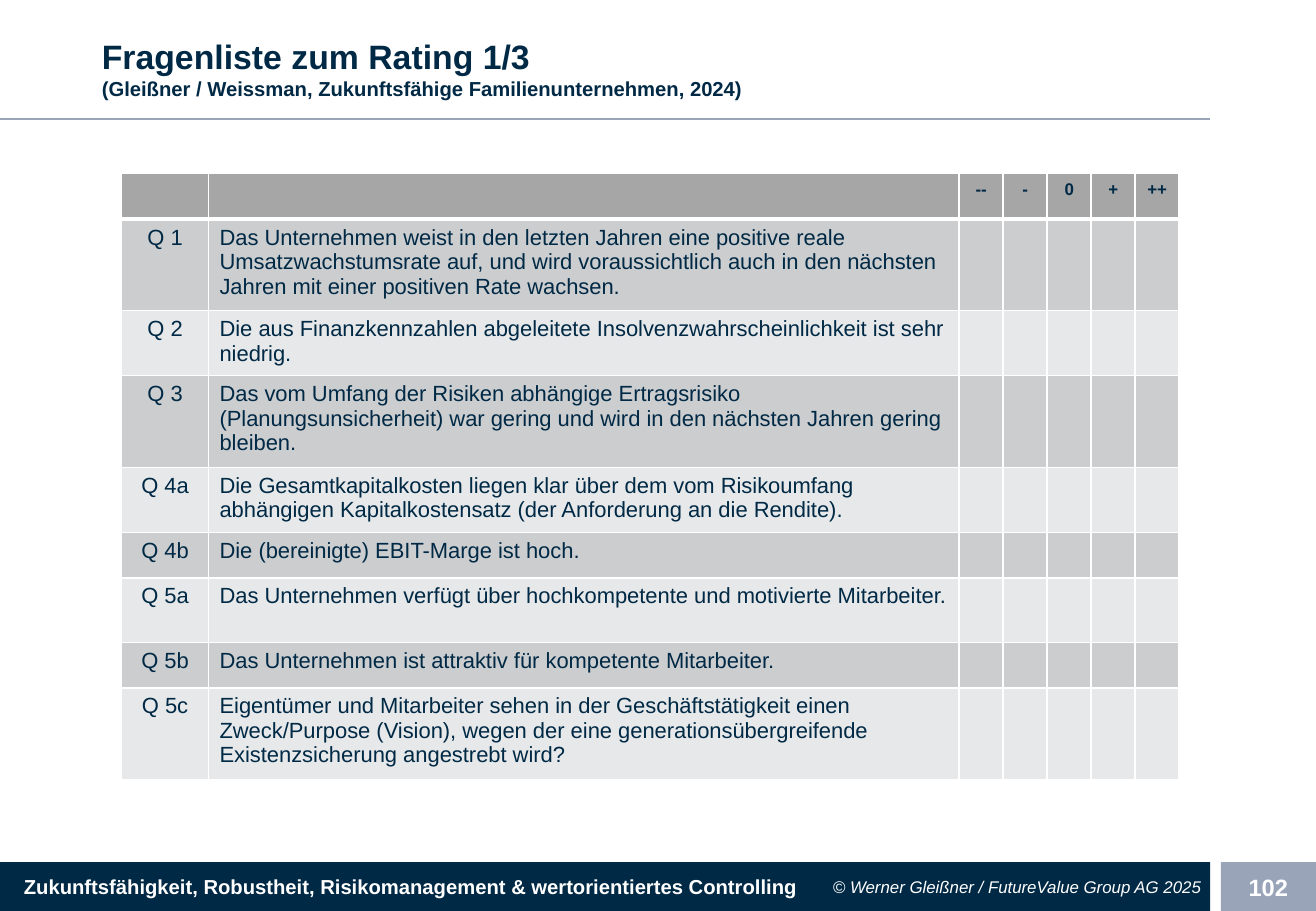
from lxml.etree import SubElement
from pptx import Presentation
from pptx.dml.color import RGBColor
from pptx.enum.shapes import MSO_CONNECTOR, MSO_SHAPE
from pptx.enum.text import MSO_ANCHOR, PP_ALIGN
from pptx.oxml.ns import qn
from pptx.util import Cm, Pt

COLORS = {
    "navy": "002945",
    "steel": "99A4B9",
    "white": "FFFFFF",
    "header": "A6A6A6",
    "dark_band": "CCCDCF",
    "light_band": "E7E8E9",
}
RATINGS = ["--", "-", "0", "+", "++"]
TALL, MEDIUM, LOW = 1.88, 1.35, 0.95
QUESTIONS = [
    ("Q 1", TALL, "Das Unternehmen weist in den letzten Jahren eine positive reale "
     "Umsatzwachstumsrate auf, und wird voraussichtlich auch in den nächsten Jahren "
     "mit einer positiven Rate wachsen."),
    ("Q 2", MEDIUM, "Die aus Finanzkennzahlen abgeleitete Insolvenzwahrscheinlichkeit "
     "ist sehr niedrig."),
    ("Q 3", TALL, "Das vom Umfang der Risiken abhängige Ertragsrisiko "
     "(Planungsunsicherheit) war gering und wird in den nächsten Jahren gering bleiben."),
    ("Q 4a", MEDIUM, "Die Gesamtkapitalkosten liegen klar über dem vom Risikoumfang "
     "abhängigen Kapitalkostensatz (der Anforderung an die Rendite)."),
    ("Q 4b", LOW, "Die (bereinigte) EBIT-Marge ist hoch."),
    ("Q 5a", MEDIUM, "Das Unternehmen verfügt über hochkompetente und motivierte "
     "Mitarbeiter."),
    ("Q 5b", LOW, "Das Unternehmen ist attraktiv für kompetente Mitarbeiter."),
    ("Q 5c", TALL, "Eigentümer und Mitarbeiter sehen in der Geschäftstätigkeit einen "
     "Zweck/Purpose (Vision), wegen der eine generationsübergreifende "
     "Existenzsicherung angestrebt wird?"),
]


def add_text(p, text, size, color, bold=False, italic=False):
    r = p.add_run()
    r.text = text
    r.font.name = "Arial"
    r.font.size = Pt(size)
    r.font.bold = bold
    r.font.italic = italic
    r.font.color.rgb = RGBColor.from_string(COLORS[color])


def set_up_frame(sp, align, left=0.2, wrap=True):
    """Set margins, anchor and alignment, and return the first paragraph."""
    tf = sp.text_frame
    tf.word_wrap = wrap
    tf.vertical_anchor = MSO_ANCHOR.MIDDLE
    tf.margin_left, tf.margin_right = Cm(left), Cm(0.2)
    tf.margin_top = tf.margin_bottom = Cm(0.1)
    p = tf.paragraphs[0]
    p.alignment = align
    return p


prs = Presentation()
prs.slide_width, prs.slide_height = Cm(27.51), Cm(19.05)
s = prs.slides.add_slide(prs.slide_layouts[6])

# Footer
footer_top, footer_height, content_width = Cm(18.03), Cm(1.02), Cm(25.3)
bars = [
    (Cm(0), content_width, "navy", PP_ALIGN.LEFT, 0.5, False, 12,
     "Zukunftsfähigkeit, Robustheit, Risikomanagement & wertorientiertes Controlling"),
    (Cm(25.52), Cm(1.99), "steel", PP_ALIGN.CENTER, 0.2, True, 14, "102"),
]
for left, width, color, align, inset, wrap, size, text in bars:
    bar = s.shapes.add_shape(MSO_SHAPE.RECTANGLE, left, footer_top, width, footer_height)
    bar.shadow.inherit = False
    bar.fill.solid()
    bar.fill.fore_color.rgb = RGBColor.from_string(COLORS[color])
    bar.line.fill.background()
    add_text(set_up_frame(bar, align, inset, wrap), text, size, "white", bold=True)

copyright_box = s.shapes.add_textbox(Cm(14.3), footer_top, Cm(11), footer_height)
add_text(set_up_frame(copyright_box, PP_ALIGN.RIGHT),
         "© Werner Gleißner / FutureValue Group AG 2025", 10, "white", italic=True)

# Title
rule = s.shapes.add_connector(MSO_CONNECTOR.STRAIGHT, 0, Cm(2.49), content_width, Cm(2.49))
rule.line.color.rgb = RGBColor.from_string(COLORS["steel"])
rule.line.width = Pt(1.5)
SubElement(rule._element.spPr, qn("a:effectLst"))

title = s.shapes.add_textbox(Cm(1.93), Cm(0.61), Cm(22.63), Cm(1.65))
p = set_up_frame(title, PP_ALIGN.LEFT)
add_text(p, "Fragenliste zum Rating 1/3", 20, "navy", bold=True)
p.add_line_break()
add_text(p, "(Gleißner / Weissman, Zukunftsfähige Familienunternehmen, 2024)", 12, "navy",
         bold=True)

# Question table
rows = [["", ""] + RATINGS]
rows += [[number, question] + [""] * len(RATINGS) for number, _, question in QUESTIONS]
heights = [LOW] + [height for _, height, _ in QUESTIONS]
widths = [1.82, 15.69] + [0.92] * len(RATINGS)
table = s.shapes.add_table(len(rows), len(widths), Cm(2.54), Cm(3.63),
                           Cm(sum(widths)), Cm(sum(heights))).table
table.first_row = table.horz_banding = False
for column, width in zip(table.columns, widths):
    column.width = Cm(width)
for i, (texts, height) in enumerate(zip(rows, heights)):
    table.rows[i].height = Cm(height)
    is_header = i == 0
    band = "header" if is_header else ("light_band", "dark_band")[i % 2]
    for j, text in enumerate(texts):
        cell = table.cell(i, j)
        cell.margin_left = cell.margin_right = Cm(0.23)
        cell.margin_top = cell.margin_bottom = Cm(0.13)
        tcPr = cell._tc.get_or_add_tcPr()
        for side in ("L", "R", "T", "B"):
            thick = (is_header and side == "B") or (i == 1 and side == "T")
            ln = SubElement(tcPr, qn(f"a:ln{side}"), w=str(Pt(3 if thick else 1)))
            SubElement(SubElement(ln, qn("a:solidFill")), qn("a:srgbClr"), val=COLORS["white"])
        cell.fill.solid()
        cell.fill.fore_color.rgb = RGBColor.from_string(COLORS[band])
        p = cell.text_frame.paragraphs[0]
        p.alignment = PP_ALIGN.LEFT if j == 1 else PP_ALIGN.CENTER
        if text:
            add_text(p, text, 10 if is_header else 13, "navy", bold=is_header)
        else:
            SubElement(p._p, qn("a:endParaRPr"), sz="1000")

prs.save("out.pptx")
